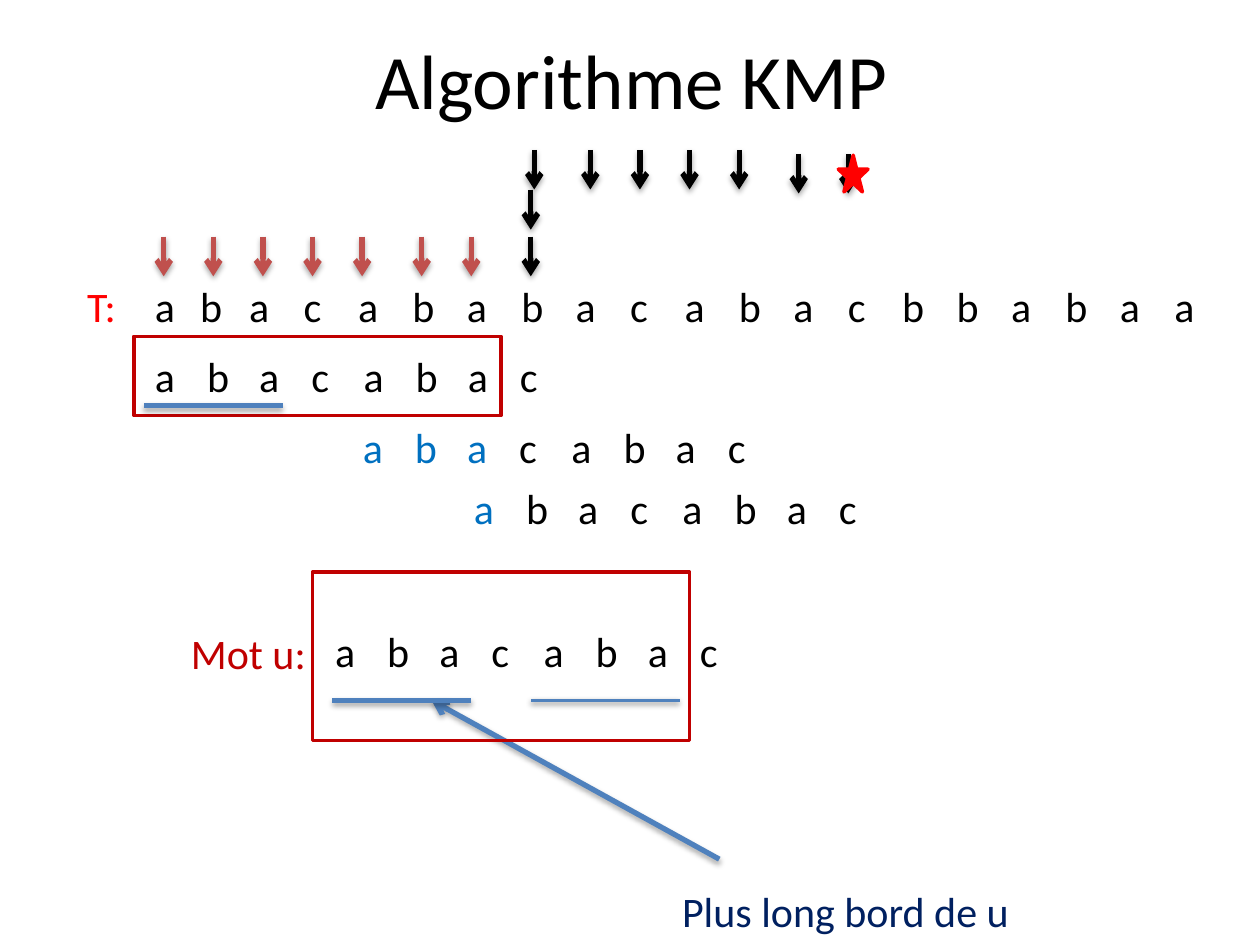
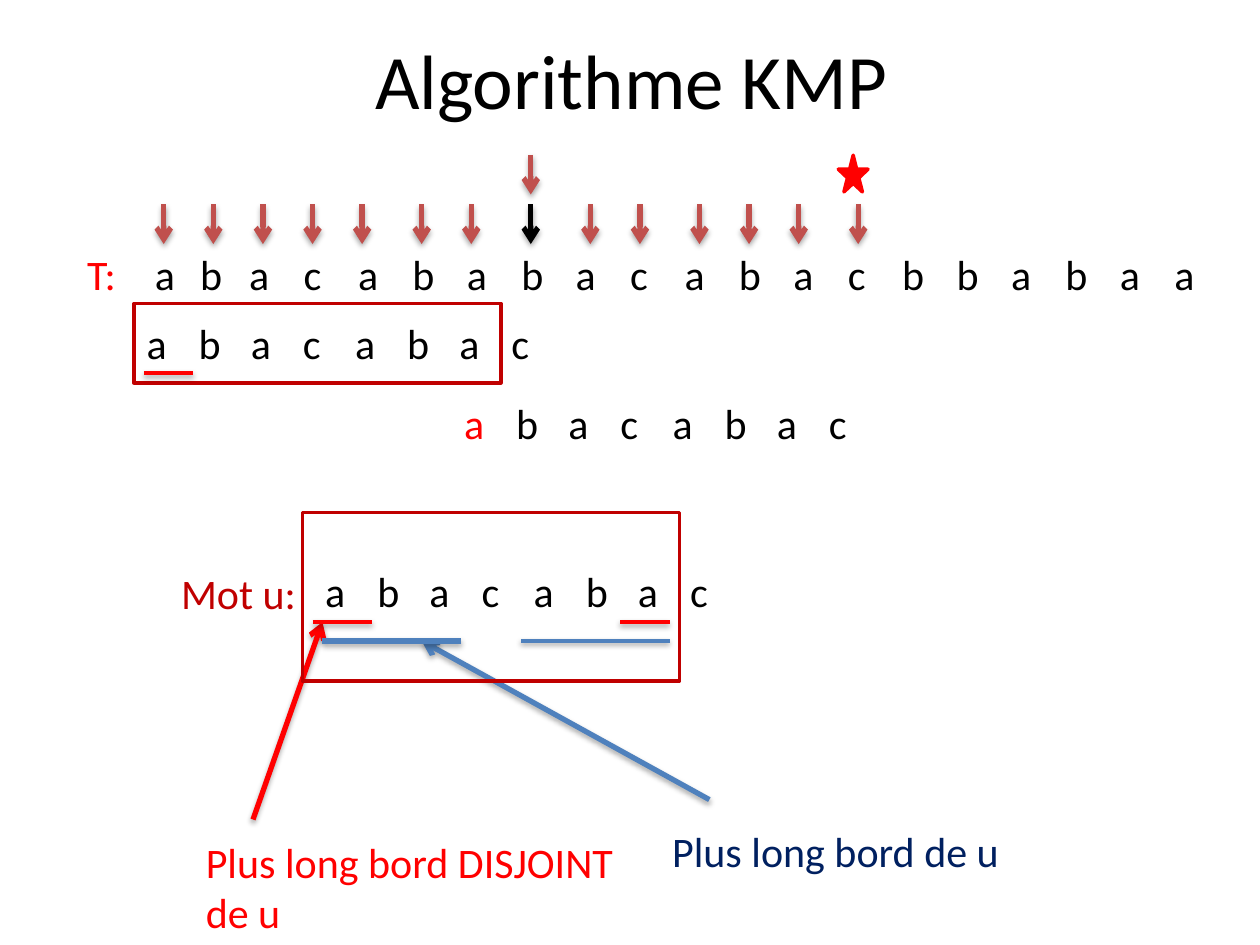
from lxml.etree import SubElement
from pptx import Presentation
from pptx.dml.color import RGBColor
from pptx.enum.shapes import MSO_CONNECTOR, MSO_SHAPE
from pptx.enum.text import MSO_ANCHOR, MSO_AUTO_SIZE, PP_ALIGN
from pptx.oxml.ns import qn
from pptx.util import Mm, Pt

# Shared style
BLACK = RGBColor(0x00, 0x00, 0x00)
RED = RGBColor(0xFF, 0x00, 0x00)
DARK_RED = RGBColor(0xC0, 0x00, 0x00)
BRICK = RGBColor(0xC0, 0x50, 0x4D)
BLUE = RGBColor(0x4F, 0x81, 0xBD)
LETTER_BLUE = RGBColor(0x00, 0x70, 0xC0)
NAVY = RGBColor(0x00, 0x20, 0x60)
FONT = "Calibri"
BODY_SIZE = 24
THICK, THIN = 3, 2
NO_TABLE_STYLE = "{2D5ABB26-0587-4C30-8999-92F81FD0307C}"

# Grid: one unit is one millimetre, 254 columns by 190.5 rows
WIDTH, HEIGHT = 254, 190.5
ROW = 16
ARROW_LENGTH = 8
WORD_COLUMN = 10.51
TEXT_COLUMNS = [13.7, 9.1, 9.9] + [10.97] * 18
TEXT_LEFT = 15

TEXT = "abacababacabacbbabaa"
WORD = "abacabac"
PREFIX_ARROWS = [33, 43, 53, 63, 73, 85, 95]
MISMATCH = 107


def format_run(run, color, size=BODY_SIZE):
    settings = {"name": FONT, "size": Pt(size), "bold": False}
    for name, value in settings.items():
        setattr(run.font, name, value)
    run.font.color.rgb = color


def add_text(slide, lines, left, top, width, height, color,
             size=BODY_SIZE, centered=False):
    shape = slide.shapes.add_textbox(Mm(left), Mm(top), Mm(width), Mm(height))
    frame = shape.text_frame
    frame.word_wrap = centered
    if centered:
        frame.vertical_anchor = MSO_ANCHOR.MIDDLE
    else:
        frame.auto_size = MSO_AUTO_SIZE.SHAPE_TO_FIT_TEXT
    for index, line in enumerate(lines):
        paragraph = frame.add_paragraph() if index else frame.paragraphs[0]
        paragraph.alignment = PP_ALIGN.CENTER if centered else PP_ALIGN.LEFT
        run = paragraph.add_run()
        run.text = line
        format_run(run, color, size)


def add_letters(slide, letters, columns, left, top, marked=0, mark_color=BLACK):
    """One-row table; the first `marked` cells take mark_color."""
    shape = slide.shapes.add_table(1, len(letters), Mm(left), Mm(top),
                                   Mm(sum(columns)), Mm(ROW))
    table = shape.table
    table.first_row = table.horz_banding = False
    for style in shape.element.iter(qn("a:tableStyleId")):
        style.text = NO_TABLE_STYLE
    for index, (letter, width) in enumerate(zip(letters, columns)):
        table.columns[index].width = Mm(width)
        cell = table.cell(0, index)
        cell.fill.background()
        run = cell.text_frame.paragraphs[0].add_run()
        run.text = letter
        format_run(run, mark_color if index < marked else BLACK)


def add_word(slide, left, top, marked=0, mark_color=BLACK):
    add_letters(slide, WORD, [WORD_COLUMN] * len(WORD), left, top,
                marked, mark_color)


def add_line(slide, start, end, color, width=THICK, arrow=False):
    line = slide.shapes.add_connector(MSO_CONNECTOR.STRAIGHT,
                                      *map(Mm, (*start, *end)))
    line.line.color.rgb = color
    line.line.width = Pt(width)
    properties = line.element.spPr
    if arrow:
        SubElement(properties.find(qn("a:ln")), qn("a:tailEnd"), type="arrow")
    # Soft shadow straight below the line
    distance, alpha = (23000, 35000) if width == THICK else (20000, 38000)
    effects = SubElement(properties, qn("a:effectLst"))
    shadow = SubElement(effects, qn("a:outerShdw"), blurRad="40000",
                        dist=str(distance), dir="5400000", rotWithShape="0")
    black = SubElement(shadow, qn("a:srgbClr"), val="000000")
    SubElement(black, qn("a:alpha"), val=str(alpha))


def add_underline(slide, left, right, top, color, width):
    add_line(slide, (left, top), (right, top), color, width)


def add_down_arrows(slide, columns, top, color):
    for column in columns:
        add_line(slide, (column, top), (column, top + ARROW_LENGTH), color,
                 arrow=True)


def add_outline(slide, kind, left, top, width, height, color, filled=False):
    shape = slide.shapes.add_shape(kind, *map(Mm, (left, top, width, height)))
    shape.shadow.inherit = False
    shape.line.color.rgb = color
    shape.line.width = Pt(THIN)
    if filled:
        shape.fill.solid()
        shape.fill.fore_color.rgb = color
    else:
        shape.fill.background()


def add_star(slide):
    add_outline(slide, MSO_SHAPE.STAR_5_POINT, 169, 31.3, 6, 7.4, RED, True)


def add_prefix_box(slide, top):
    add_outline(slide, MSO_SHAPE.RECTANGLE, 27, top, 74, ROW, DARK_RED)


def add_base(presentation, text_top):
    """Title, searched text and the arrows of the first attempt."""
    slide = presentation.slides.add_slide(presentation.slide_layouts[6])
    add_text(slide, ["Algorithme KMP"], 13, 0, 0.9 * WIDTH, HEIGHT / 6,
             BLACK, 44, centered=True)
    add_letters(slide, ["T:", *TEXT], TEXT_COLUMNS, TEXT_LEFT, text_top,
                1, RED)
    arrow_top = text_top - ARROW_LENGTH
    add_down_arrows(slide, PREFIX_ARROWS, arrow_top, BRICK)
    add_down_arrows(slide, [MISMATCH], arrow_top, BLACK)
    return slide


def add_border_figure(slide, left, top, width):
    """Word u, its longest border and the caption that points to it."""
    add_word(slide, left, top)
    add_text(slide, ["Mot u:"], left - 29, top, 28.4, 12.7, DARK_RED)
    add_line(slide, (left + 80, top + 48), (left + 22, top + ROW), BLUE,
             arrow=True)
    add_text(slide, ["Plus long bord de u"], left + 70, top + 52, 73.4, 12.7,
             NAVY)
    add_outline(slide, MSO_SHAPE.RECTANGLE, left - 2, top - 9.9, width, 34,
                DARK_RED)
    add_underline(slide, left + 42, left + 72, top + ROW, BLUE, THIN)
    add_underline(slide, left + 2, left + 30, top + ROW, BLUE, THICK)


def build_border_slide(presentation):
    slide = add_base(presentation, 55.7)
    # Successive alignments of the word
    add_word(slide, 28.7, 69.8)
    add_word(slide, 70.6, 84.1, 3, LETTER_BLUE)
    add_word(slide, 93, 96.5, 1, LETTER_BLUE)
    add_prefix_box(slide, 67.8)
    add_underline(slide, 29, 57, 81.8, BLUE, THICK)
    add_border_figure(slide, 65, 125.2, 76)
    # Comparisons after the shifts
    add_down_arrows(slide, [MISMATCH], 38.3, BLACK)
    add_down_arrows(slide, [107.7, 119, 129, 139, 149], 30.2, BLACK)
    add_down_arrows(slide, [161, 171], 31, BLACK)
    add_star(slide)


def build_disjoint_slide(presentation):
    slide = add_base(presentation, 49.2)
    # Alignments of the word and comparisons after the shift
    add_word(slide, 27, 63.2)
    add_word(slide, 91, 79.2, 1, RED)
    add_down_arrows(slide, [MISMATCH], 31.2, BRICK)
    add_down_arrows(slide, [119, 129, 141, 151, 161, 173], 41.2, BRICK)
    add_star(slide)
    add_prefix_box(slide, 61.2)
    add_underline(slide, 29, 39, 75.2, RED, THIN)
    # Disjoint border in red on the word
    left, top = 63, 113.2
    red_top = top + 12.2
    add_line(slide, (left - 12, top + 52), (left + 2, red_top), RED,
             arrow=True)
    add_text(slide, ["Plus long bord DISJOINT", "de u"], 39, 167.4, 90, 23.1,
             RED)
    add_border_figure(slide, left, top, 76)
    for start, end in [(62, 72), (0, 12)]:
        add_underline(slide, left + start, left + end, red_top, RED, THIN)


def main():
    presentation = Presentation()
    presentation.slide_width = Mm(WIDTH)
    presentation.slide_height = Mm(HEIGHT)
    build_border_slide(presentation)
    build_disjoint_slide(presentation)
    presentation.save("out.pptx")


if __name__ == "__main__":
    main()
